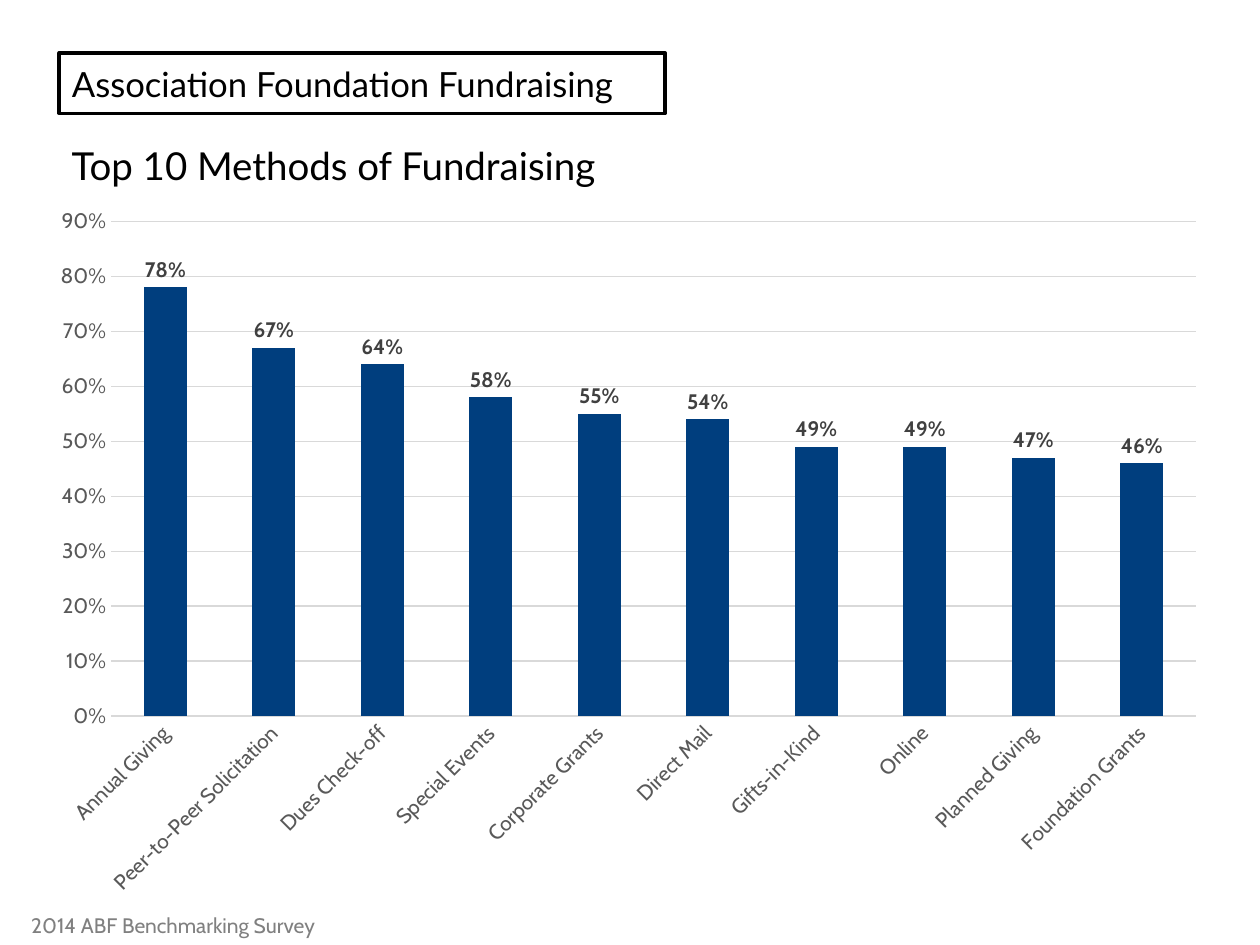
from dataclasses import dataclass

import lxml.etree
import pptx
import pptx.chart.data
import pptx.dml.color
import pptx.enum.chart
import pptx.enum.shapes
import pptx.enum.text
import pptx.oxml
import pptx.oxml.ns
import pptx.util

Pt = pptx.util.Pt
ALIGN = pptx.enum.text.PP_ALIGN
NONE_TICK = pptx.enum.chart.XL_TICK_MARK.NONE
BLACK, WHITE, NAVY = "000000", "FFFFFF", "003E7E"
GRID, AXIS_TEXT, LABEL_TEXT, SOURCE_TEXT = "D9D9D9", "595959", "404040", "808080"

METHODS = {
    "Annual Giving": 0.78,
    "Peer-to-Peer Solicitation": 0.67,
    "Dues Check-off": 0.64,
    "Special Events": 0.58,
    "Corporate Grants": 0.55,
    "Direct Mail": 0.54,
    "Gifts-in-Kind": 0.49,
    "Online": 0.49,
    "Planned Giving": 0.47,
    "Foundation Grants": 0.46,
}


@dataclass
class Box:
    left: float
    top: float
    width: float
    height: float

    def emu(self) -> tuple:
        return tuple(Pt(v) for v in (self.left, self.top, self.width, self.height))


@dataclass
class Label:
    text: str
    box: Box
    font: str
    size: float
    color: str
    align: ALIGN = ALIGN.LEFT


TITLE = Label("Association Foundation Fundraising", Box(33.84, 30.24, 346.32, 34.56),
              "Lato", 19.8, BLACK)
SUBTITLE = Label("Top 10 Methods of Fundraising", Box(33.84, 77.04, 624.24, 34.56),
                 "Lato", 22, BLACK)
SOURCE = Label("2014 ABF Benchmarking Survey", Box(0, 519.84, 198, 18),
               "Cabin", 12, SOURCE_TEXT, ALIGN.CENTER)
CHART = Box(23.04, 110.16, 673.92, 409.68)
PLOT = {"x": 0.06, "y": 0.04, "w": 0.92, "h": 0.69}


def rgb(color: str) -> pptx.dml.color.RGBColor:
    return pptx.dml.color.RGBColor.from_string(color)


def set_attrs(obj, values: dict) -> None:
    for name, value in values.items():
        setattr(obj, name, value)


def set_font(font, name: str, size: float, color: str, bold: bool = False) -> None:
    set_attrs(font, {"name": name, "size": Pt(size), "bold": bold})
    font.color.rgb = rgb(color)


def set_fill(sp, color: str) -> None:
    sp.fill.solid()
    sp.fill.fore_color.rgb = rgb(color)


def set_line(line, color: str, width: float) -> None:
    line.color.rgb = rgb(color)
    line.width = Pt(width)


def write(sp, label: Label) -> None:
    set_attrs(sp, dict(zip(("left", "top", "width", "height"), label.box.emu())))
    tf = sp.text_frame
    set_attrs(tf, {"word_wrap": True,
                   "auto_size": pptx.enum.text.MSO_AUTO_SIZE.NONE,
                   "vertical_anchor": pptx.enum.text.MSO_ANCHOR.MIDDLE})
    p = tf.paragraphs[0]
    p.alignment = label.align
    r = p.add_run()
    r.text = label.text
    set_font(r.font, label.font, label.size, label.color)


def set_plot_layout(chart, plot: dict) -> None:
    """Fix the inner plot area, as fractions of the chart."""
    area = chart.plots[0]._element.getparent()
    qn = pptx.oxml.ns.qn
    for old in area.findall(qn("c:layout")):
        area.remove(old)
    layout = pptx.oxml.parse_xml(f"<c:layout {pptx.oxml.ns.nsdecls('c')}/>")
    manual = lxml.etree.SubElement(layout, qn("c:manualLayout"))
    values = {"layoutTarget": "inner", "xMode": "edge", "yMode": "edge", **plot}
    for name, value in values.items():
        lxml.etree.SubElement(manual, qn(f"c:{name}")).set("val", str(value))
    area.insert(0, layout)


def add_methods_chart(s, box: Box) -> None:
    data = pptx.chart.data.CategoryChartData(number_format="0%")
    data.categories = list(METHODS)
    data.add_series("Series 1", list(METHODS.values()))
    kind = pptx.enum.chart.XL_CHART_TYPE.COLUMN_CLUSTERED
    chart = s.shapes.add_chart(kind, *box.emu(), data).chart
    set_attrs(chart, {"has_legend": False, "has_title": False})
    set_font(chart.font, "Cabin", 10, BLACK)
    set_plot_layout(chart, PLOT)

    # Bars and their labels
    plot = chart.plots[0]
    set_attrs(plot, {"gap_width": 154, "overlap": 12, "vary_by_categories": False,
                     "has_data_labels": True})
    set_fill(plot.series[0].format, NAVY)
    labels = plot.data_labels
    set_attrs(labels, {"show_value": True, "number_format": "0%",
                       "number_format_is_linked": False,
                       "position": pptx.enum.chart.XL_LABEL_POSITION.OUTSIDE_END})
    set_font(labels.font, "Cabin", 12, LABEL_TEXT, True)

    # Axes
    cat, val = chart.category_axis, chart.value_axis
    for axis in (cat, val):
        set_attrs(axis, {"major_tick_mark": NONE_TICK, "minor_tick_mark": NONE_TICK})
        set_font(axis.tick_labels.font, "Cabin", 12, AXIS_TEXT)
    set_line(cat.format.line, GRID, 0.75)
    body = cat._element.find(".//" + pptx.oxml.ns.qn("a:bodyPr"))
    body.set("rot", str(-45 * 60000))
    set_attrs(val, {"minimum_scale": 0, "maximum_scale": 0.9, "major_unit": 0.1,
                    "has_major_gridlines": True})
    set_attrs(val.tick_labels, {"number_format": "0%", "number_format_is_linked": False})
    val.format.line.fill.background()
    set_line(val.major_gridlines.format.line, GRID, 0.75)


def main() -> None:
    prs = pptx.Presentation()
    set_attrs(prs, {"slide_width": Pt(720), "slide_height": Pt(540)})
    s = prs.slides.add_slide(prs.slide_layouts[5])

    # Framed title and subtitle
    title = s.shapes.title
    write(title, TITLE)
    set_fill(title, WHITE)
    set_line(title.line, BLACK, 2)
    write(s.shapes.add_textbox(*SUBTITLE.box.emu()), SUBTITLE)

    add_methods_chart(s, CHART)

    # Source note
    sp = s.shapes.add_shape(pptx.enum.shapes.MSO_SHAPE.RECTANGLE, *SOURCE.box.emu())
    sp.shadow.inherit = False
    set_fill(sp, WHITE)
    sp.line.fill.background()
    write(sp, SOURCE)

    prs.save("out.pptx")


if __name__ == "__main__":
    main()
